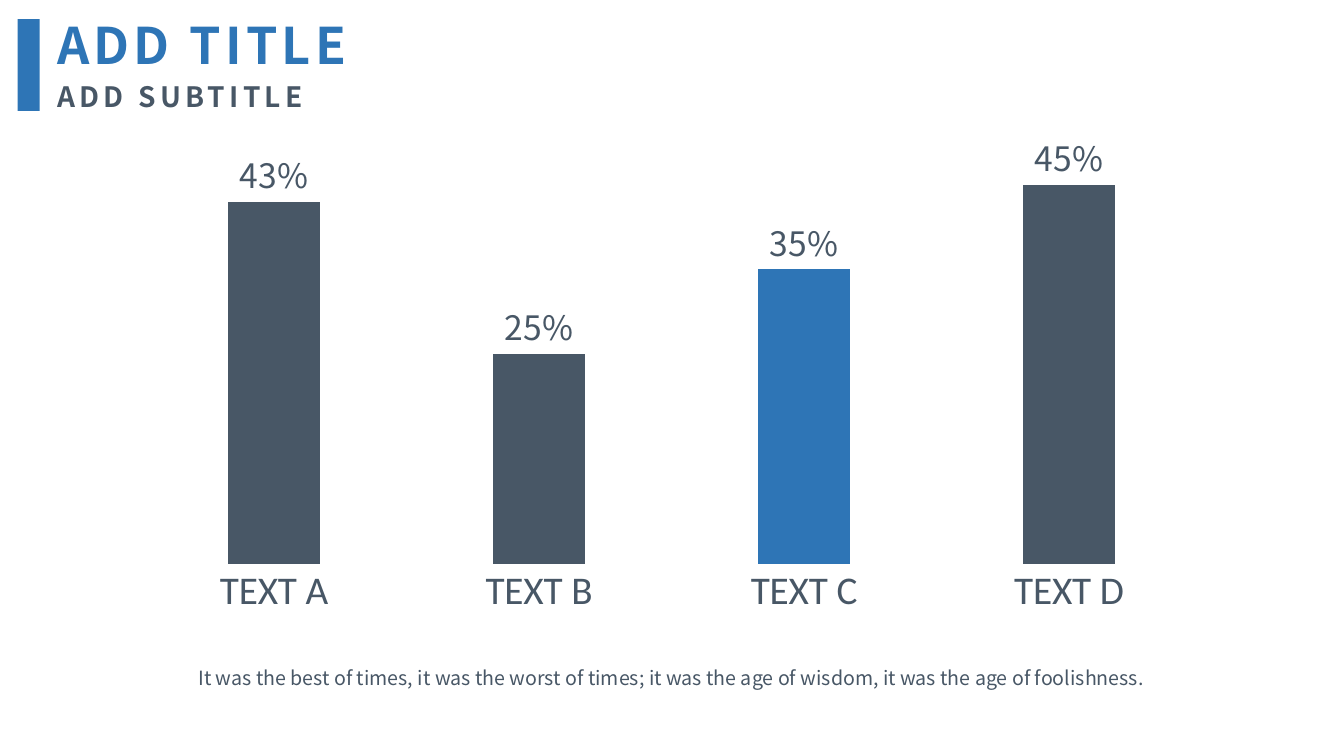
from lxml import etree
from pptx import Presentation
from pptx import util as u
from pptx.chart.data import CategoryChartData
from pptx.dml.color import RGBColor
from pptx.enum import chart as charts, shapes, text
from pptx.oxml import parse_xml
from pptx.oxml.ns import nsdecls

Pt = u.Pt
BLUE = RGBColor(0x2E, 0x75, 0xB6)
SLATE = RGBColor(0x48, 0x57, 0x66)
SANS = "Noto Sans CJK SC"
SHARES = {"TEXT A": 4.3, "TEXT B": 2.5, "TEXT C": 3.5, "TEXT D": 4.5}
HIGHLIGHT = "TEXT C"


def style(font, name=SANS, size=14, color=SLATE, bold=False):
    """Set the typeface, size, weight and colour of a font."""
    font.name, font.size, font.bold = name, Pt(size), bold
    font.color.rgb = color


def write(frame, words, align=None, spacing=0, **look):
    """Fill a text frame with one formatted paragraph."""
    paragraph = frame.paragraphs[0]
    paragraph.alignment = align
    run = paragraph.add_run()
    run.text = words
    style(run.font, **look)
    if spacing:
        run._r.get_or_add_rPr().set("spc", str(spacing * 100))


def place(shape, left, top, width, height):
    """Move a shape and anchor its text at the top."""
    shape.left, shape.top = Pt(left), Pt(top)
    shape.width, shape.height = Pt(width), Pt(height)
    frame = shape.text_frame
    frame.word_wrap = True
    frame.vertical_anchor = text.MSO_ANCHOR.TOP
    frame.auto_size = text.MSO_AUTO_SIZE.SHAPE_TO_FIT_TEXT
    return frame


def add_heading(slide, left, top, width, height):
    """Place the accent bar, title and subtitle."""
    accent = slide.shapes.add_shape(
        shapes.MSO_SHAPE.RECTANGLE, Pt(left), Pt(top + 7.2), Pt(15.8), Pt(height - 13))
    accent.shadow.inherit = False
    accent.fill.solid()
    accent.fill.fore_color.rgb = BLUE
    accent.line.fill.background()

    text_left, text_width = left + 21.2, width - 21.2
    title = place(slide.shapes.title, text_left, top, text_width, 51.1)
    write(title, "ADD TITLE", size=36, color=BLUE, bold=True,
          align=text.PP_ALIGN.LEFT, spacing=3)
    subtitle = place(slide.placeholders[1], text_left, top + 46.8, text_width, 31.7)
    subtitle.paragraphs[0].space_before = Pt(0)
    write(subtitle, "ADD SUBTITLE", size=20, bold=True,
          align=text.PP_ALIGN.LEFT, spacing=3)


def fix_plot_area(chart, **fractions):
    """Pin the inner plot area to fractions of the chart."""
    plot_area = chart._chartSpace.chart.plotArea
    for old in plot_area.findall("{*}layout"):
        plot_area.remove(old)
    layout = parse_xml(
        f'<c:layout {nsdecls("c")}><c:manualLayout><c:layoutTarget val="inner"/>'
        '<c:xMode val="edge"/><c:yMode val="edge"/></c:manualLayout></c:layout>')
    namespace = etree.QName(layout).namespace
    for key, value in fractions.items():
        etree.SubElement(layout[0], f"{{{namespace}}}{key}").set("val", str(value))
    plot_area.insert(0, layout)


def add_shares_chart(slide, left, top, width, height):
    """Draw the labelled columns with one highlighted."""
    data = CategoryChartData(number_format="General")
    data.categories = list(SHARES)
    data.add_series("Series 1", list(SHARES.values()))
    chart = slide.shapes.add_chart(
        charts.XL_CHART_TYPE.COLUMN_CLUSTERED,
        Pt(left), Pt(top), Pt(width), Pt(height), data).chart
    chart.has_legend = chart.has_title = False
    chart.font.name, chart.font.size = "Calibri", Pt(10)
    fix_plot_area(chart, x=15.4 / width, y=7.1 / height,
                  w=757.2 / width, h=300.7 / height)

    scale = chart.value_axis
    scale.minimum_scale, scale.maximum_scale = 0, 5
    scale.has_major_gridlines = scale.visible = False
    names = chart.category_axis
    names.major_tick_mark = charts.XL_TICK_MARK.NONE
    names.format.line.fill.background()
    style(names.tick_labels.font, name="Calibri", size=28)

    columns = chart.plots[0]
    columns.gap_width, columns.overlap = 186, -100
    columns.vary_by_categories = False
    series = columns.series[0]
    labels = series.data_labels
    labels.show_value = True
    labels.number_format, labels.number_format_is_linked = "0.00%", False
    labels.position = charts.XL_LABEL_POSITION.OUTSIDE_END
    style(labels.font, size=24)
    for index, (name, share) in enumerate(SHARES.items()):
        point = series.points[index]
        point.format.fill.solid()
        point.format.fill.fore_color.rgb = BLUE if name == HIGHLIGHT else SLATE
        write(point.data_label.text_frame, f"{share * 10:.0f}%", size=24)
        point.data_label.position = charts.XL_LABEL_POSITION.OUTSIDE_END


def add_caption(slide, left, top, width, height):
    """Place the centred sentence below the chart."""
    caption = slide.shapes.add_textbox(0, 0, 0, 0)
    write(place(caption, left, top, width, height),
          "It was the best of times, it was the worst of times; "
          "it was the age of wisdom, it was the age of foolishness.",
          align=text.PP_ALIGN.CENTER)


def main():
    """Build and save the slide."""
    deck = Presentation()
    deck.slide_width, deck.slide_height = Pt(960), Pt(540)
    slide = deck.slides.add_slide(deck.slide_layouts[0])
    add_shares_chart(slide, 85.7, 95, 789, 351.4)
    add_caption(slide, 77.9, 472.3, 803.6, 24.5)
    add_heading(slide, 12.6, 6.5, 271, 78.5)
    deck.save("out.pptx")


if __name__ == "__main__":
    main()
